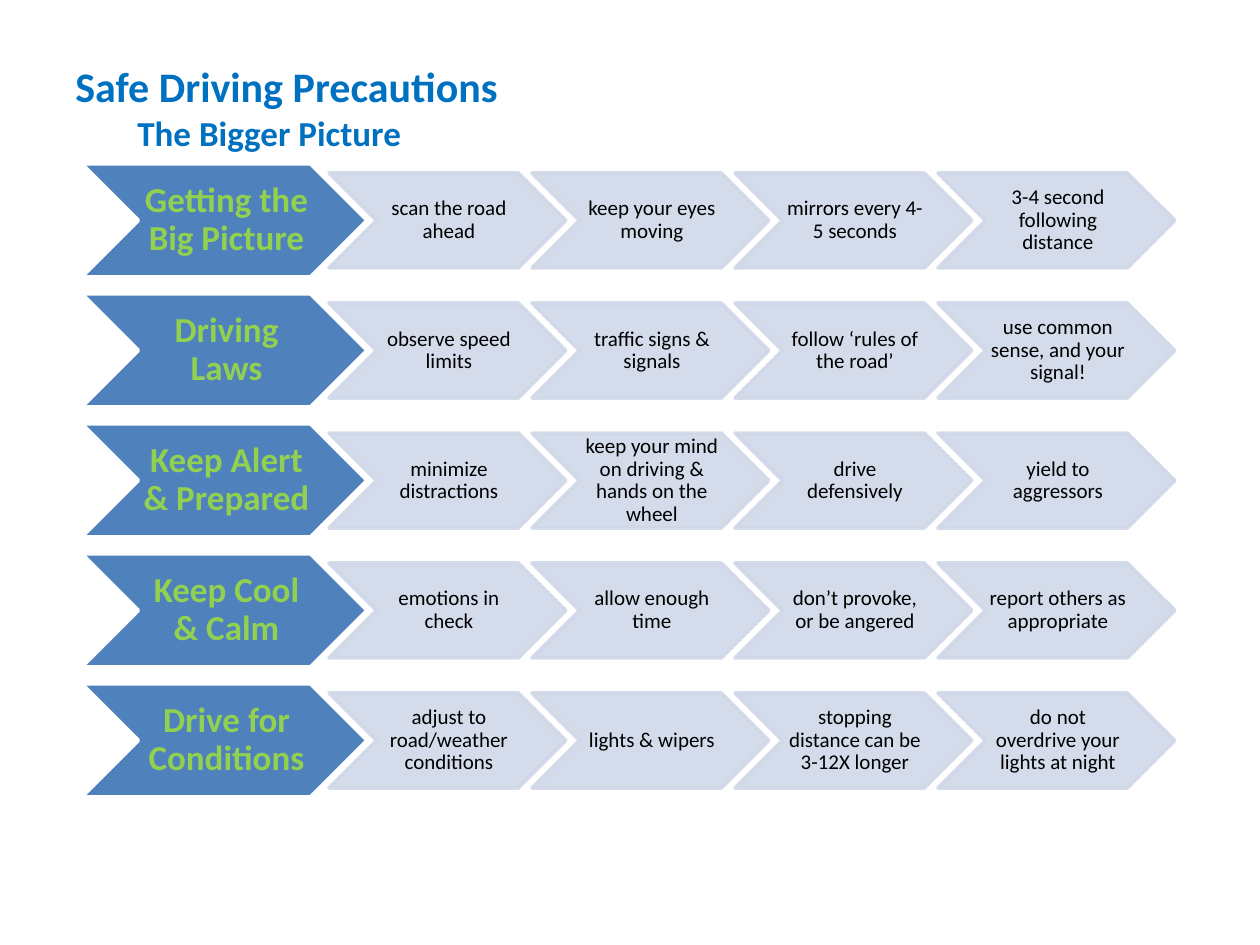
from lxml.etree import SubElement
from pptx import Presentation
from pptx.dml.color import RGBColor
from pptx.enum.shapes import MSO_SHAPE
from pptx.enum.text import MSO_ANCHOR, PP_ALIGN
from pptx.oxml.ns import qn
from pptx.util import Inches, Pt

BLUE, GREEN, STEEL, PALE = "0070C0", "92D050", "4F81BD", "D0D8E8"
ROWS = [
    ("Getting the Big Picture", "scan the road ahead", "keep your eyes moving",
     "mirrors every 4-5 seconds", "3-4 second following distance"),
    ("Driving Laws", "observe speed limits", "traffic signs & signals",
     "follow ‘rules of the road’", "use common sense, and your signal!"),
    ("Keep Alert & Prepared", "minimize distractions",
     "keep your mind on driving & hands on the wheel",
     "drive defensively", "yield to aggressors"),
    ("Keep Cool & Calm", "emotions in check", "allow enough time",
     "don’t provoke, or be angered", "report others as appropriate"),
    ("Drive for Conditions", "adjust to road/weather conditions",
     "lights & wipers", "stopping distance can be 3-12X longer",
     "do not overdrive your lights at night"),
]


def px(n):
    return round(n * Inches(1) / 126)


def tint(color, code, alpha=100):
    """Set a fill or line colour from a hex string, with opacity in percent."""
    color.rgb = RGBColor.from_string(code)
    if alpha < 100:
        node = color._xFill.find(qn("a:srgbClr"))
        SubElement(node, qn("a:alpha"), val=str(alpha * 1000))


def write(para, text, size, code, bold=False):
    run = para.add_run()
    run.text = text
    font = run.font
    font.name, font.size, font.bold = "Calibri", Pt(size), bold
    tint(font.color, code)


def title(slide, x, y, w, h):
    box = slide.shapes.add_textbox(px(x), px(y), px(w), px(h))
    frame = box.text_frame
    frame.word_wrap = True
    frame.vertical_anchor = MSO_ANCHOR.MIDDLE
    write(frame.paragraphs[0], "Safe Driving Precautions", 24, BLUE, True)
    sub = frame.add_paragraph()
    sub._p.get_or_add_pPr().set("marL", str(px(62)))
    write(sub, "The Bigger Picture", 20, BLUE, True)


def arrow(slide, x, y, w, h, text, head):
    """Draw one chevron, either the head of a row or a step in it."""
    shape = slide.shapes.add_shape(MSO_SHAPE.CHEVRON, px(x), px(y), px(w), px(h))
    shape.shadow.inherit = False
    alpha = 100 if head else 90
    shape.fill.solid()
    tint(shape.fill.fore_color, STEEL if head else PALE, alpha)
    shape.line.width = Pt(2)
    shape.line.fill.solid()
    tint(shape.line.fill.fore_color, "FFFFFF" if head else PALE, alpha)

    frame = shape.text_frame
    frame.word_wrap = True
    frame.vertical_anchor = MSO_ANCHOR.MIDDLE
    frame.margin_left, frame.margin_right = px(4 if head else 3), 0
    frame.margin_top = frame.margin_bottom = px(1)
    para = frame.paragraphs[0]
    para.alignment = PP_ALIGN.CENTER
    para.line_spacing = 0.9
    write(para, text, 20 if head else 12, GREEN if head else "000000", head)


def row(slide, x, y, h, head, steps):
    arrow(slide, x, y, 285, h, head, True)
    tall = 95
    for i, step in enumerate(steps):
        arrow(slide, x + 247 + 203 * i, y + (h - tall) // 2, 237, tall, step, False)


def main():
    deck = Presentation()
    deck.slide_width, deck.slide_height = Inches(10), Inches(7.5)
    slide = deck.slides.add_slide(deck.slide_layouts[6])
    title(slide, 63, 63, 1134, 88)
    # One row of chevrons per precaution
    for i, (head, *steps) in enumerate(ROWS):
        row(slide, 82, 164 + 130 * i, 113, head, steps)
    deck.save("out.pptx")


if __name__ == "__main__":
    main()
